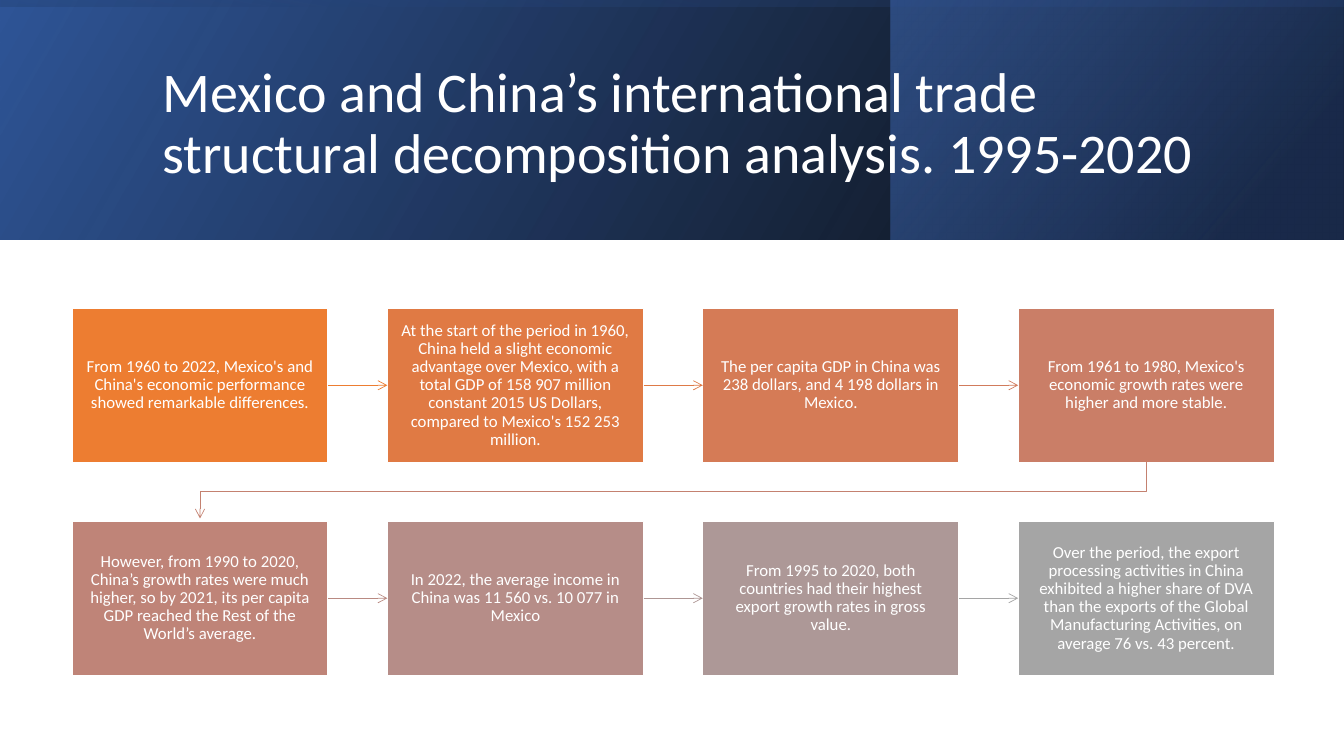
from lxml.etree import SubElement
from pptx import Presentation
from pptx.dml.color import RGBColor
from pptx.enum.shapes import MSO_CONNECTOR, MSO_SHAPE
from pptx.enum.text import MSO_ANCHOR, MSO_AUTO_SIZE, PP_ALIGN
from pptx.oxml.ns import qn
from pptx.util import Pt

TITLE = "Mexico and China’s international trade structural decomposition analysis. 1995-2020"
WHITE = RGBColor(0xFF, 0xFF, 0xFF)
BLACK = RGBColor(0x00, 0x00, 0x00)
NAVY = RGBColor(0x20, 0x38, 0x64)
DEEP_BLUE = RGBColor(0x2F, 0x55, 0x97)
BLUE = RGBColor(0x44, 0x72, 0xC4)
ELBOW_COLOR = RGBColor(0xC4, 0x81, 0x70)

STEPS = [
    ("From 1960 to 2022, Mexico's and China's economic performance showed remarkable differences.",
     RGBColor(0xED, 0x7D, 0x31)),
    ("At the start of the period in 1960, China held a slight economic advantage over Mexico, "
     "with a total GDP of 158 907 million constant 2015 US Dollars, compared to Mexico's 152 253 million.",
     RGBColor(0xE0, 0x7A, 0x44)),
    ("The per capita GDP in China was 238 dollars, and 4 198 dollars in Mexico.",
     RGBColor(0xD5, 0x7B, 0x56)),
    ("From 1961 to 1980, Mexico's economic growth rates were higher and more stable.",
     RGBColor(0xCA, 0x7E, 0x67)),
    ("However, from 1990 to 2020, China’s growth rates were much higher, so by 2021, "
     "its per capita GDP reached the Rest of the World’s average.",
     RGBColor(0xBF, 0x84, 0x78)),
    ("In 2022, the average income in China was 11 560 vs. 10 077 in Mexico",
     RGBColor(0xB6, 0x8D, 0x88)),
    ("From 1995 to 2020, both countries had their highest export growth rates in gross value.",
     RGBColor(0xAD, 0x98, 0x97)),
    ("Over the period, the export processing activities in China exhibited a higher share of DVA "
     "than the exports of the Global Manufacturing Activities, on average 76 vs. 43 percent.",
     RGBColor(0xA5, 0xA5, 0xA5)),
]
ARROW_COLORS = {
    0: RGBColor(0xED, 0x7D, 0x31),
    1: RGBColor(0xDE, 0x7A, 0x47),
    2: RGBColor(0xD1, 0x7B, 0x5C),
    4: RGBColor(0xB9, 0x8A, 0x82),
    5: RGBColor(0xAE, 0x96, 0x94),
    6: RGBColor(0xA5, 0xA5, 0xA5),
}

SLIDE_WIDTH, SLIDE_HEIGHT, BANNER_HEIGHT = 960, 540, 171
BANNER_LAYERS = [
    ((0, 0, SLIDE_WIDTH, BANNER_HEIGHT), 0, 330,
     [(0, BLACK, 96), (100, DEEP_BLUE, 100)]),
    ((636.5, 0, 323, BANNER_HEIGHT), 0, 320,
     [(19, NAVY, 68), (100, BLUE, 48)]),
    (((SLIDE_WIDTH - BANNER_HEIGHT) / 2, (BANNER_HEIGHT - SLIDE_WIDTH) / 2,
      BANNER_HEIGHT, SLIDE_WIDTH), 270, 350,
     [(23, DEEP_BLUE, 16), (99, BLACK, 45)]),
]
COLUMNS = 4
BOX_LEFT, BOX_TOP, BOX_WIDTH, BOX_HEIGHT = 51.4, 220.2, 183, 110
COLUMN_STEP, ROW_STEP = 225.3, 152.1


def write_text(shape, text, size, align, margins):
    frame = shape.text_frame
    frame.word_wrap = True
    frame.auto_size = MSO_AUTO_SIZE.NONE
    frame.vertical_anchor = MSO_ANCHOR.MIDDLE
    frame.margin_left = frame.margin_right = Pt(margins[0])
    frame.margin_top = frame.margin_bottom = Pt(margins[1])
    paragraph = frame.paragraphs[0]
    paragraph.alignment = align
    paragraph.line_spacing = 0.9
    run = paragraph.add_run()
    run.text = text
    run.font.size = Pt(size)
    run.font.name = "Calibri"
    run.font.color.rgb = WHITE


def add_rectangle(slide, bounds):
    shape = slide.shapes.add_shape(MSO_SHAPE.RECTANGLE, *map(Pt, bounds))
    shape.shadow.inherit = False
    return shape


def add_banner_layer(slide, bounds, rotation, angle, stops):
    shape = add_rectangle(slide, bounds)
    shape.rotation = rotation
    shape.line.fill.background()
    shape.fill.gradient()
    properties = shape._element.spPr
    properties.find(qn("a:xfrm")).set("flipH", "1")
    gradient = properties.find(qn("a:gradFill"))
    stop_list = gradient.find(qn("a:gsLst"))
    for stop in list(stop_list):
        stop_list.remove(stop)
    for position, color, opacity in stops:
        stop = SubElement(stop_list, qn("a:gs"), pos=str(position * 1000))
        fill = SubElement(stop, qn("a:srgbClr"), val=str(color))
        SubElement(fill, qn("a:alpha"), val=str(opacity * 1000))
    direction = gradient.find(qn("a:lin"))
    direction.set("ang", str(angle * 60000))
    direction.set("scaled", "0")


def format_arrow(line, color):
    line.color.rgb = color
    line.width = Pt(0.5)
    SubElement(line._get_or_add_ln(), qn("a:tailEnd"), type="arrow")


def add_step(slide, index, text, color):
    row, column = divmod(index, COLUMNS)
    box = add_rectangle(slide, (BOX_LEFT + column * COLUMN_STEP, BOX_TOP + row * ROW_STEP,
                                BOX_WIDTH, BOX_HEIGHT))
    box.fill.solid()
    box.fill.fore_color.rgb = color
    box.line.color.rgb = WHITE
    box.line.width = Pt(1)
    write_text(box, text, size=12, align=PP_ALIGN.CENTER, margins=(9, 9.4))
    return box


def add_arrow(slide, start, end, color):
    arrow = slide.shapes.add_connector(MSO_CONNECTOR.STRAIGHT, 0, 0, 0, 0)
    arrow.begin_connect(start, 3)
    arrow.end_connect(end, 1)
    format_arrow(arrow.line, color)
    SubElement(arrow._element.spPr, qn("a:effectLst"))


def add_row_turn(slide):
    left = BOX_LEFT + BOX_WIDTH / 2
    right = left + (COLUMNS - 1) * COLUMN_STEP
    top = BOX_TOP + BOX_HEIGHT
    bottom = BOX_TOP + ROW_STEP
    middle = (top + bottom) / 2
    builder = slide.shapes.build_freeform(Pt(right), Pt(top))
    corners = [(right, middle), (left, middle), (left, bottom - 2)]
    builder.add_line_segments([(Pt(x), Pt(y)) for x, y in corners], close=False)
    turn = builder.convert_to_shape()
    turn.shadow.inherit = False
    turn.fill.background()
    format_arrow(turn.line, ELBOW_COLOR)


def main():
    presentation = Presentation()
    presentation.slide_width, presentation.slide_height = Pt(SLIDE_WIDTH), Pt(SLIDE_HEIGHT)
    slide = presentation.slides.add_slide(presentation.slide_layouts[5])
    for layer in BANNER_LAYERS:
        add_banner_layer(slide, *layer)

    title = slide.shapes.title
    title.left, title.top, title.width, title.height = map(Pt, (108.7, 27.4, 765.4, 123.8))
    write_text(title, TITLE, size=40, align=PP_ALIGN.LEFT, margins=(7.2, 3.6))
    slide.shapes._spTree.append(title._element)

    boxes = [add_step(slide, index, *step) for index, step in enumerate(STEPS)]
    for index, color in ARROW_COLORS.items():
        add_arrow(slide, boxes[index], boxes[index + 1], color)
    add_row_turn(slide)
    presentation.save("out.pptx")


if __name__ == "__main__":
    main()
